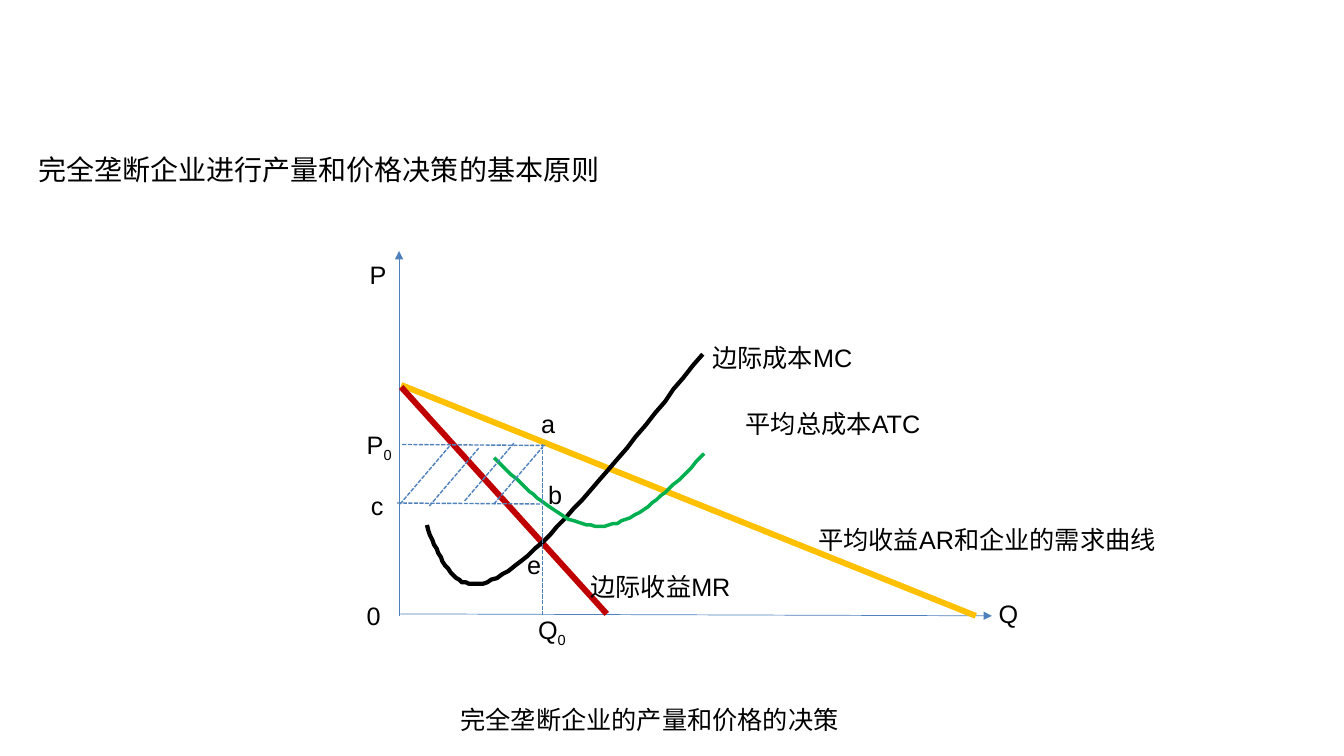
from lxml.etree import SubElement
from pptx import Presentation
from pptx.dml.color import RGBColor
from pptx.enum.dml import MSO_LINE
from pptx.enum.shapes import MSO_CONNECTOR
from pptx.enum.text import MSO_ANCHOR, MSO_AUTO_SIZE, PP_ALIGN
from pptx.oxml.ns import qn
from pptx.util import Pt

BLUE, YELLOW, RED, GREEN, BLACK = "4F81BD", "FFC000", "C00000", "00B050", "000000"


def rgb(value):
    return RGBColor.from_string(value)


def bezier(p0, p1, p2, p3, steps=24):
    """Return the points after p0 along a cubic curve."""
    points = []
    for i in range(1, steps + 1):
        t = i / steps
        u = 1 - t
        points.append(tuple(
            u**3 * a + 3 * u**2 * t * b + 3 * u * t**2 * c + t**3 * d
            for a, b, c, d in zip(p0, p1, p2, p3)))
    return points


class Diagram:
    """Holds the text style and the slide being drawn."""

    def __init__(self, slide, font="Arial", size=18, color=BLACK):
        self.slide, self.shapes = slide, slide.shapes
        self.font, self.size, self.color = font, size, color

    def style(self, r, size=None):
        r.font.name = self.font
        r.font.size = Pt(size or self.size)
        r.font.color.rgb = rgb(self.color)

    def title(self, text, x, y, w, h, size):
        sp = self.shapes.title
        sp.left, sp.top, sp.width, sp.height = Pt(x), Pt(y), Pt(w), Pt(h)
        tf = sp.text_frame
        tf.text = text
        tf.auto_size = MSO_AUTO_SIZE.NONE
        tf.vertical_anchor = MSO_ANCHOR.TOP
        tf.margin_left = tf.margin_right = tf.margin_bottom = 0
        tf.margin_top = Pt(3.6)
        p = tf.paragraphs[0]
        p.alignment = PP_ALIGN.LEFT
        self.style(p.runs[0], size)

    def label(self, text, x, y, w, sub="", wrap=False):
        sp = self.shapes.add_textbox(Pt(x), Pt(y), Pt(w), Pt(29))
        tf = sp.text_frame
        tf.word_wrap = wrap
        p = tf.paragraphs[0]
        p.text = text
        if sub:
            r = p.add_run()
            r.text = sub
            r._r.get_or_add_rPr().set("baseline", "-25000")
        for r in p.runs:
            self.style(r)

    def line(self, x1, y1, x2, y2, color=BLUE, width=1.0, dash=False, arrow=False):
        cx = self.shapes.add_connector(
            MSO_CONNECTOR.STRAIGHT, Pt(x1), Pt(y1), Pt(x2), Pt(y2))
        cx.line.color.rgb = rgb(color)
        cx.line.width = Pt(width)
        if dash:
            cx.line.dash_style = MSO_LINE.SQUARE_DOT
        if arrow:
            SubElement(cx.line._get_or_add_ln(), qn("a:tailEnd"), type="triangle")
        SubElement(cx._element.spPr, qn("a:effectLst"))

    def curve(self, points, color, width):
        """Draw joined cubic curves: a start, then three points for each."""
        track = []
        for i in range(0, len(points) - 1, 3):
            track += bezier(*points[i:i + 4])
        builder = self.shapes.build_freeform(*points[0], scale=Pt(1))
        builder.add_line_segments(track, close=False)
        sp = builder.convert_to_shape()
        sp.shadow.inherit = False
        sp.fill.background()
        sp.line.color.rgb = rgb(color)
        sp.line.width = Pt(width)


def main():
    prs = Presentation()
    prs.slide_width, prs.slide_height = Pt(960), Pt(540)
    d = Diagram(prs.slides.add_slide(prs.slide_layouts[5]))
    d.title("完全垄断企业进行产量和价格决策的基本原则", 27.4, 105.1, 905, 28, 20)

    # Axes and revenue lines
    d.line(285.1, 438.5, 708.5, 439.9, width=0.5, arrow=True)
    d.line(285.1, 439.9, 285.1, 179.3, width=0.5, arrow=True)
    d.line(697, 439.9, 286.6, 275, YELLOW, 4.25)
    d.line(433.4, 438.5, 286.6, 276.5, RED, 4.25)

    # Cost curves
    d.curve([(304.6, 375.1), (315.4, 403.2), (326.2, 430.6), (359.3, 410.4),
             (391.7, 390.2), (447.1, 321.8), (501.8, 252.7)], BLACK, 3)
    d.curve([(352.8, 326.9), (378, 351.4), (403.2, 376.6), (428.4, 375.8),
             (453.6, 375.1), (478.1, 349.9), (503.3, 324)], GREEN, 2.5)

    # Guides and the hatched profit area
    d.line(387.4, 317.5, 387.4, 439.9, dash=True)
    d.line(287.3, 317.5, 390.2, 318.2, dash=True)
    d.line(283.7, 359.3, 387.4, 360, dash=True)
    for x, y in [(285.8, 360), (306.7, 361.4), (331.9, 357.8), (352.8, 360)]:
        d.line(x, y, x + 35.2, y - 41.2, dash=True)

    for text, x, y, w in [
        ("Q", 706.3, 424.1, 28.8), ("P", 257, 181.4, 26.6),
        ("0", 254.9, 425.5, 24.5), ("a", 379.4, 288, 24.5),
        ("b", 384.5, 339.1, 24.5), ("e", 369.4, 388.8, 24.5),
        ("c", 257.8, 347, 23.8),
        ("完全垄断企业的产量和价格的决策", 321.8, 499.7, 289.4),
    ]:
        d.label(text, x, y, w)
    d.label("Q", 377.3, 434.9, 35.3, sub="0")
    d.label("P", 254.9, 303.1, 33.1, sub="0")
    for text, x, y, w in [
        ("平均收益AR和企业的需求曲线", 577.4, 370.8, 257.8),
        ("边际收益MR", 414.7, 404.6, 116.6),
        ("边际成本MC", 501.8, 241.2, 115.2),
        ("平均总成本ATC", 525.6, 288, 140.4),
    ]:
        d.label(text, x, y, w, wrap=True)

    prs.save("out.pptx")


if __name__ == "__main__":
    main()
